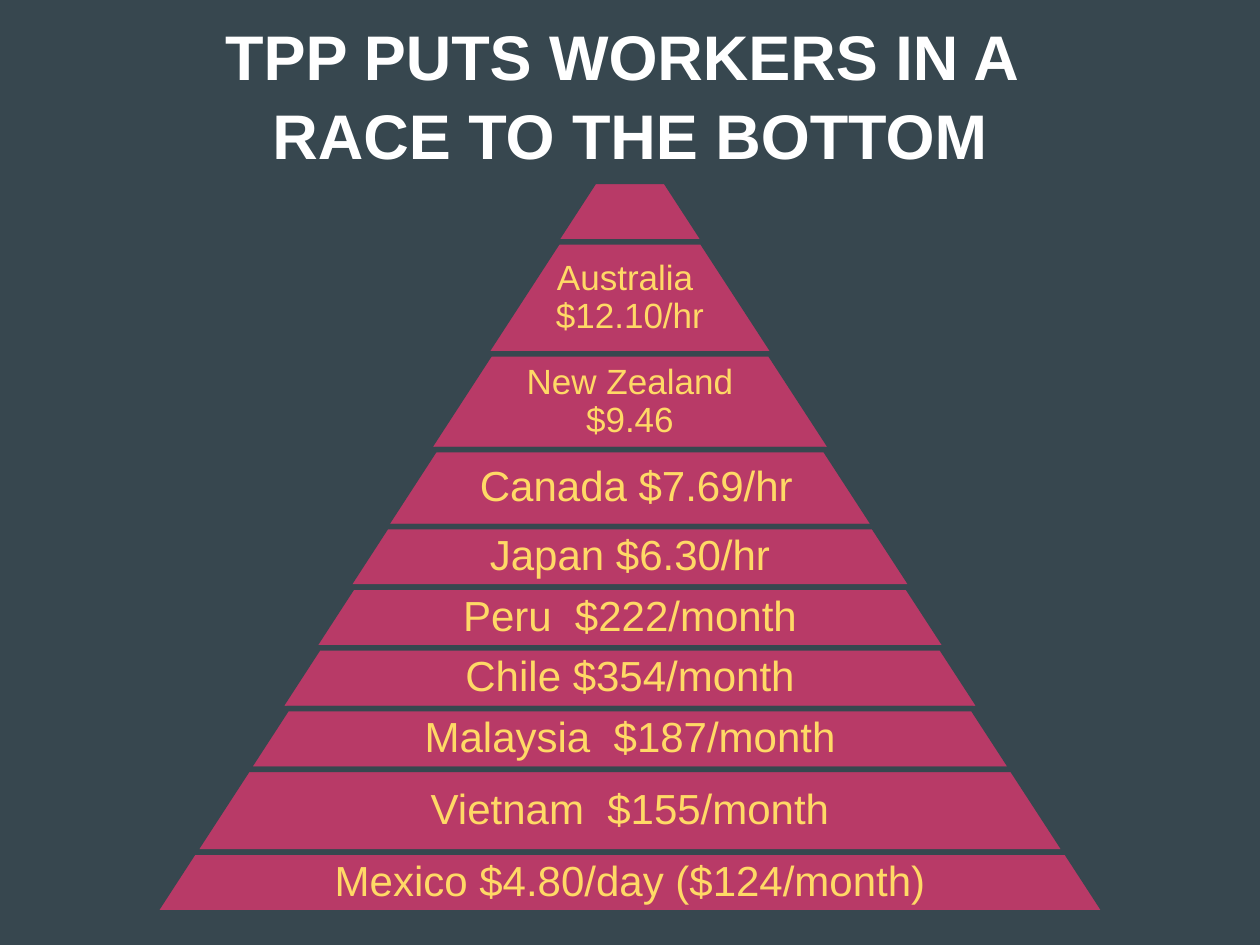
from collections import namedtuple

from pptx import Presentation
from pptx.dml.color import RGBColor
from pptx.enum.shapes import MSO_SHAPE as Shape
from pptx.enum.text import MSO_ANCHOR as Anchor, PP_ALIGN as Align
from pptx.util import Pt

Box = namedtuple("Box", "left top width height")
Tier = namedtuple("Tier", "label height width size", defaults=(24,))

BACKGROUND = "37474F"
CENTER = 360
TIERS = [
    Tier("", 34.7, 85.7),
    Tier("Australia  $12.10/hr", 64, 165.6, 20),
    Tier("New Zealand $9.46", 54.7, 231.1, 20),
    Tier("Canada $7.69/hr", 43.9, 280.1),
    Tier("Japan $6.30/hr", 34.7, 323.3),
    Tier("Peru  $222/month", 34.7, 362.2),
    Tier("Chile $354/month", 34.7, 401),
    Tier("Malaysia  $187/month", 34.7, 437),
    Tier("Vietnam  $155/month", 47.2, 498.2),
    Tier("Mexico $4.80/day ($124/month)", 34.7, 543.6),
]
WIDE_LABELS = {"Canada $7.69/hr": Box(258.5, 0, 210.2, 0)}


def color(value):
    return RGBColor.from_string(value)


def in_points(box):
    return [Pt(length) for length in box]


def add_text(page, box, text, size, ink, anchor, spacing, insets, bold=False):
    frame = page.shapes.add_textbox(*in_points(box)).text_frame
    frame.word_wrap = True
    frame.vertical_anchor = anchor
    frame.margin_left = frame.margin_right = Pt(insets[0])
    frame.margin_top = frame.margin_bottom = Pt(insets[1])
    frame.text = text
    for para in frame.paragraphs:
        para.alignment = Align.CENTER
        para.line_spacing = spacing
        for span in para.runs:
            span.font.name = "Arial"
            span.font.size = Pt(size)
            span.font.bold = bold
            span.font.color.rgb = color(ink)


def add_title(page, box):
    add_text(page, box, "TPP PUTS WORKERS IN A \vRACE TO THE BOTTOM",
             36, "FFFFFF", Anchor.BOTTOM, 1.05, (3.6, 0), bold=True)


def add_tier(page, box, tier):
    trapezoid = page.shapes.add_shape(Shape.TRAPEZOID, *in_points(box))
    trapezoid.adjustments[0] = 0.65
    trapezoid.shadow.inherit = False
    trapezoid.fill.solid()
    trapezoid.fill.fore_color.rgb = color("B83A67")
    trapezoid.line.color.rgb = color(BACKGROUND)
    trapezoid.line.width = Pt(3.15)
    if tier.label:
        width = box.width * 0.65
        label = Box(CENTER - width / 2, box.top, width, box.height)
        if tier.label in WIDE_LABELS:
            wide = WIDE_LABELS[tier.label]
            label = label._replace(left=wide.left, width=wide.width)
        add_text(page, label, tier.label, tier.size, "FFD966",
                 Anchor.MIDDLE, 0.9, (2.2, 2.2))


def add_pyramid(page, top):
    for tier in TIERS:
        box = Box(CENTER - tier.width / 2, top, tier.width, tier.height)
        add_tier(page, box, tier)
        top += tier.height


def main():
    deck = Presentation()
    deck.slide_width, deck.slide_height = Pt(720), Pt(540)
    page = deck.slides.add_slide(deck.slide_layouts[6])
    page.background.fill.solid()
    page.background.fill.fore_color.rgb = color(BACKGROUND)
    add_title(page, Box(24.5, 18, 671, 80.6))
    add_pyramid(page, 103.6)
    deck.save("out.pptx")


if __name__ == "__main__":
    main()
